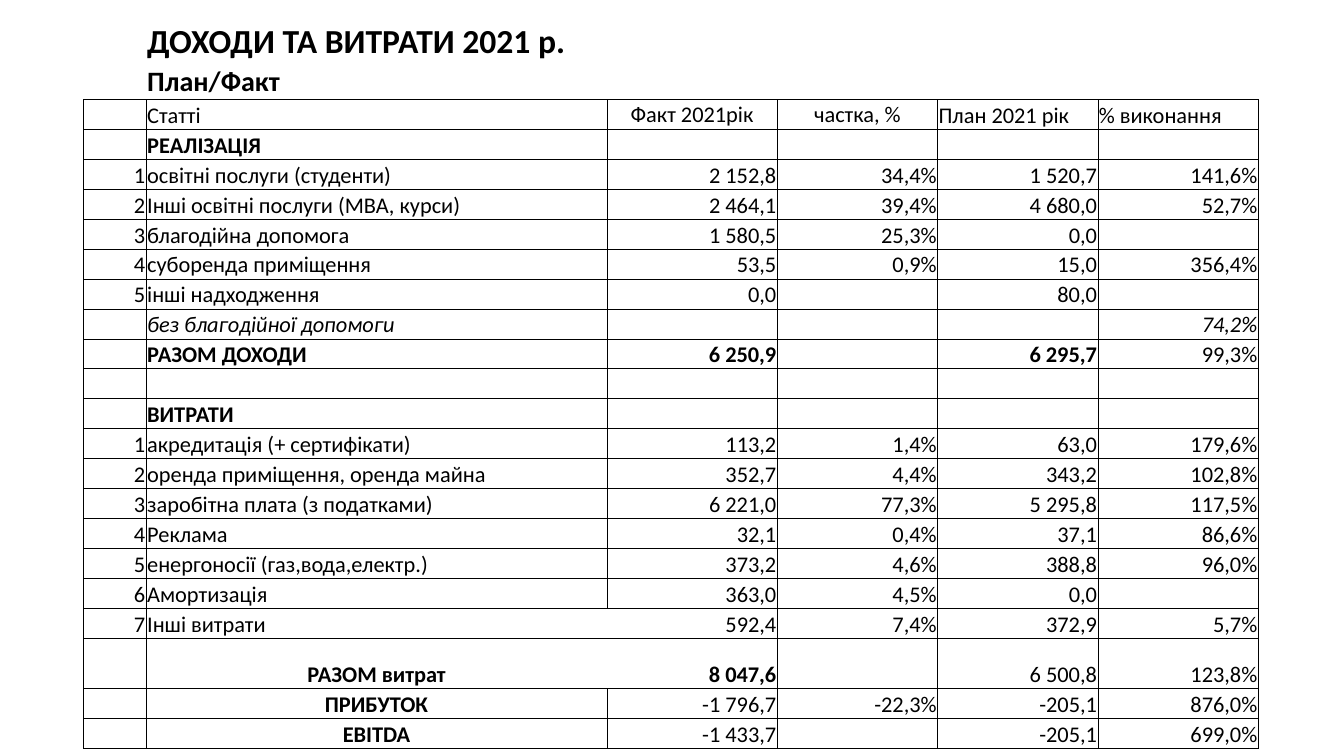
"""Build a one-slide plan/fact table of income and expenses for 2021."""
from dataclasses import dataclass

from lxml import etree
from pptx import Presentation
from pptx import util as u
from pptx.dml.color import RGBColor
from pptx.enum import text
from pptx.oxml import ns


@dataclass(frozen=True)
class Theme:
    """Colours, font, type sizes and line width in points."""
    ink: str = "000000"
    font: str = "Calibri"
    title: int = 24
    subtitle: int = 20
    body: int = 16
    line: float = 0.5


@dataclass(frozen=True)
class Row:
    """One table row; bold runs from the label to column bold_to."""
    cells: tuple[str, ...]
    bold_to: int = 0
    italic: bool = False
    size: int = Theme.body
    height: float = 3.96
    label_align: text.PP_ALIGN = text.PP_ALIGN.LEFT
    sides: str = "LRTB"
    joined: bool = False


THEME = Theme()
LEFT, CENTER, RIGHT = text.PP_ALIGN.LEFT, text.PP_ALIGN.CENTER, text.PP_ALIGN.RIGHT
SLIDE_W, SLIDE_H = u.Inches(13.33), u.Inches(7.5)
TABLE_LEFT, TABLE_TOP = 6.23, 2.67
COLUMNS = (4.65, 34.28, 12.68, 11.93, 11.93, 11.93)
LABEL, FACT, SHARE = 1, 2, 3
HEADER = 2

ROWS = (
    Row(("", "ДОХОДИ ТА ВИТРАТИ 2021 р.", "", "", "", ""), 1,
        size=THEME.title, height=4.93, sides=""),
    Row(("", "План/Факт", "", "", "", ""), 1,
        size=THEME.subtitle, height=4.93, sides="B"),
    Row(("", "Статті", "Факт 2021рік", "частка, %", "План 2021 рік", "% виконання")),
    Row(("", "РЕАЛІЗАЦІЯ", "", "", "", ""), 1),
    Row(("1", "освітні послуги (студенти)", "2 152,8", "34,4%", "1 520,7", "141,6%")),
    Row(("2", "Інші освітні послуги (МВА, курси)", "2 464,1", "39,4%", "4 680,0", "52,7%")),
    Row(("3", "благодійна допомога", "1 580,5", "25,3%", "0,0", "")),
    Row(("4", "суборенда приміщення", "53,5", "0,9%", "15,0", "356,4%")),
    Row(("5", "інші надходження", "0,0", "", "80,0", "")),
    Row(("", "без благодійної допомоги", "", "", "", "74,2%"), italic=True),
    Row(("", "РАЗОМ ДОХОДИ", "6 250,9", "", "6 295,7", "99,3%"), 4),
    Row(("", "", "", "", "", "")),
    Row(("", "ВИТРАТИ", "", "", "", ""), 1),
    Row(("1", "акредитація (+ сертифікати)", "113,2", "1,4%", "63,0", "179,6%")),
    Row(("2", "оренда приміщення, оренда майна", "352,7", "4,4%", "343,2", "102,8%")),
    Row(("3", "заробітна плата (з податками)", "6 221,0", "77,3%", "5 295,8", "117,5%")),
    Row(("4", "Реклама", "32,1", "0,4%", "37,1", "86,6%")),
    Row(("5", "енергоносії (газ,вода,електр.)", "373,2", "4,6%", "388,8", "96,0%")),
    Row(("6", "Амортизація", "363,0", "4,5%", "0,0", "")),
    Row(("7", "Інші витрати", "592,4", "7,4%", "372,9", "5,7%"), joined=True),
    Row(("", "РАЗОМ витрат", "8 047,6", "", "6 500,8", "123,8%"), 2,
        height=6.67, label_align=CENTER, joined=True),
    Row(("", "ПРИБУТОК", "-1 796,7", "-22,3%", "-205,1", "876,0%"), 1, label_align=CENTER),
    Row(("", "EBITDA", "-1 433,7", "", "-205,1", "699,0%"), 1, label_align=CENTER),
)


def across(share: float) -> int:
    """Turn a percentage of the slide's width into a length."""
    return round(SLIDE_W * share / 100)


def down(share: float) -> int:
    """Turn a percentage of the slide's height into a length."""
    return round(SLIDE_H * share / 100)


def write(cell, words: str, *, size: int, bold: bool = False, italic: bool = False,
          align: text.PP_ALIGN = LEFT,
          anchor: text.MSO_ANCHOR = text.MSO_ANCHOR.BOTTOM) -> None:
    """Put formatted text in a cell."""
    cell.margin_left = cell.margin_right = cell.margin_top = u.Inches(0.01)
    cell.margin_bottom = 0
    cell.vertical_anchor = anchor
    p = cell.text_frame.paragraphs[0]
    p.alignment = align
    if not words:
        etree.SubElement(p._p, ns.qn("a:endParaRPr"), sz=str(size * 100))
        return
    r = p.add_run()
    r.text = words
    r.font.name, r.font.size = THEME.font, u.Pt(size)
    r.font.bold, r.font.italic = bold, italic
    r.font.color.rgb = RGBColor.from_string(THEME.ink)


def border(cell, sides: str) -> None:
    """Line the given sides of a cell and clear the others."""
    props = cell._tc.get_or_add_tcPr()
    for i, side in enumerate("LRTB"):
        ln = etree.Element(ns.qn(f"a:ln{side}"), w=str(u.Pt(THEME.line)))
        if side in sides:
            fill = etree.SubElement(ln, ns.qn("a:solidFill"))
            etree.SubElement(fill, ns.qn("a:srgbClr"), val=THEME.ink)
        else:
            etree.SubElement(ln, ns.qn("a:noFill"))
        props.insert(i, ln)


def cell_sides(row: Row, col: int) -> str:
    """Give the lined sides of a cell, open between label and fact if joined."""
    if row.joined and col in (LABEL, FACT):
        return row.sides.replace("R" if col == LABEL else "L", "")
    return row.sides


def cell_align(row: Row, index: int, col: int) -> text.PP_ALIGN:
    """Give the alignment of a cell from its row and column."""
    if col == LABEL:
        return row.label_align
    if index == HEADER:
        return CENTER if col in (FACT, SHARE) else LEFT
    return RIGHT


def draw_table(s, rows: tuple[Row, ...]) -> None:
    """Draw the plan/fact table."""
    table = s.shapes.add_table(
        len(rows), len(COLUMNS), across(TABLE_LEFT), down(TABLE_TOP),
        across(sum(COLUMNS)), down(sum(row.height for row in rows))).table
    table.first_row = table.horz_banding = False
    for column, width in zip(table.columns, COLUMNS):
        column.width = across(width)
    for index, row in enumerate(rows):
        table.rows[index].height = down(row.height)
        for col, words in enumerate(row.cells):
            cell = table.cell(index, col)
            middle = index == HEADER and col in (FACT, SHARE)
            write(cell, words, size=row.size, bold=LABEL <= col <= row.bold_to,
                  italic=row.italic, align=cell_align(row, index, col),
                  anchor=text.MSO_ANCHOR.MIDDLE if middle else text.MSO_ANCHOR.BOTTOM)
            cell.fill.background()
            border(cell, cell_sides(row, col))


def main() -> None:
    """Build and save the presentation."""
    prs = Presentation()
    prs.slide_width, prs.slide_height = SLIDE_W, SLIDE_H
    s = prs.slides.add_slide(prs.slide_layouts[6])
    draw_table(s, ROWS)
    prs.save("out.pptx")


if __name__ == "__main__":
    main()
